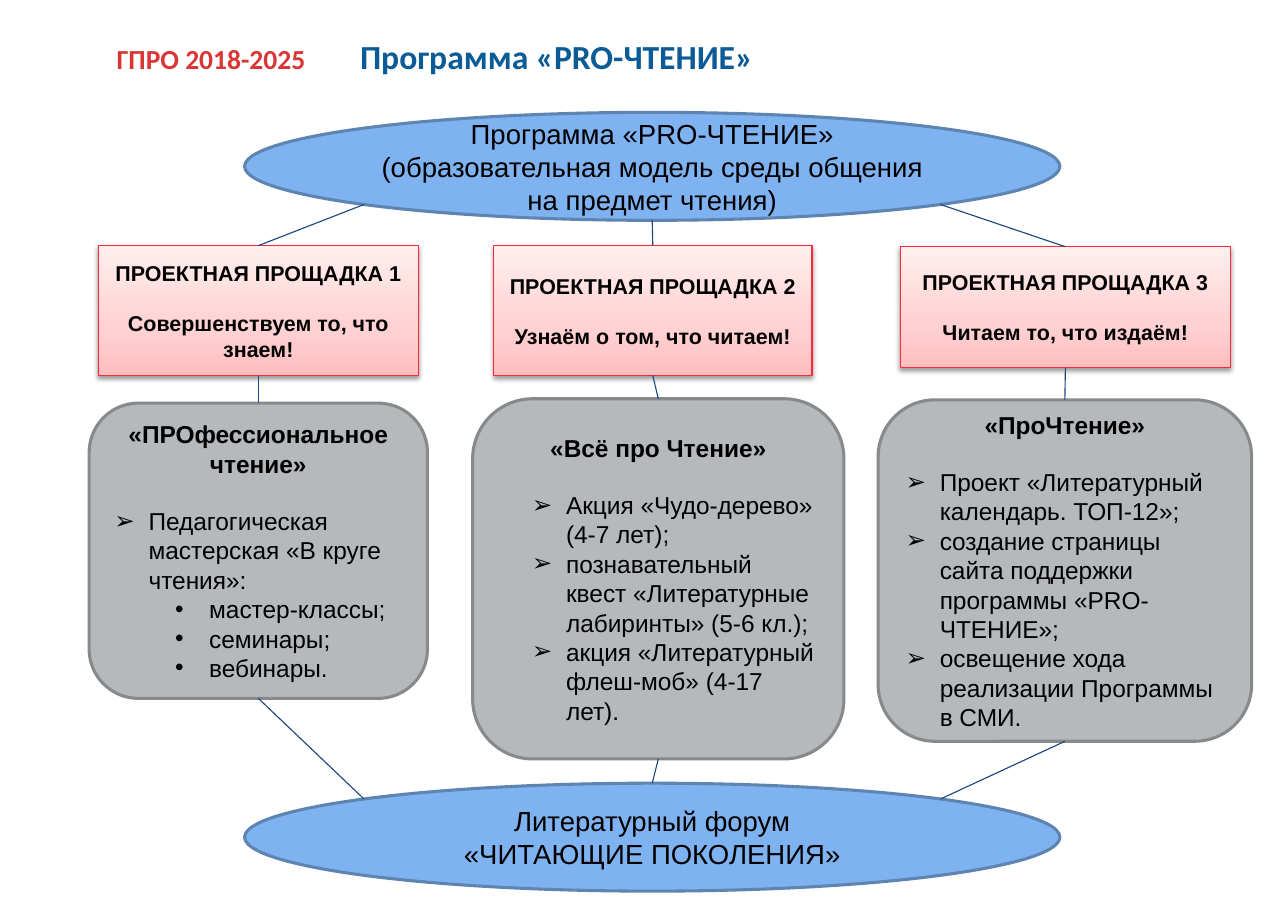
from lxml import etree
from pptx import Presentation
from pptx import util as u
from pptx.dml.color import RGBColor
from pptx.enum import shapes, text
from pptx.oxml import parse_xml
from pptx.oxml.ns import nsdecls, qn

BLACK, LINK = "000000", "1D477F"
OVAL = ("7FB2F0", "5E84B2")
CARD = ("B6B9BC", "87898B")
SITE_LINE = "FD2838"
SITE_STOPS = ((0, "FFBEBF"), (35, "FFD1D2"), (100, "FFEEEE"))
ARROW, DOT = "➢", "•"
HANG = 0.31

OVAL_LEFT, OVAL_WIDTH, OVAL_HEIGHT = 2.22, 7.4, 0.98
PROGRAM = ["Программа «PRO-ЧТЕНИЕ»",
           "(образовательная модель среды общения на предмет чтения)"]
FORUM = ["Литературный форум", "«ЧИТАЮЩИЕ ПОКОЛЕНИЯ»"]

# Each column: site box, motto, card box, card heading, items (bullet, indent, wording)
COLUMNS = [
    ((0.89, 2.23, 2.91, 1.18), "Совершенствуем то, что знаем!",
     (0.81, 3.66, 3.07, 2.68), "«ПРОфессиональное чтение»",
     [(ARROW, 0.31, "Педагогическая мастерская «В круге чтения»:"),
      (DOT, 0.86, "мастер-классы;"),
      (DOT, 0.86, "семинары;"),
      (DOT, 0.86, "вебинары.")]),
    ((4.48, 2.23, 2.89, 1.18), "Узнаём о том, что читаем!",
     (4.29, 3.62, 3.37, 3.27), "«Всё про Чтение»",
     [(ARROW, 0.59, "Акция «Чудо-дерево» (4-7 лет);"),
      (ARROW, 0.59, "познавательный квест «Литературные лабиринты» (5-6 кл.);"),
      (ARROW, 0.59, "акция «Литературный флеш-моб» (4-17 лет).")]),
    ((8.17, 2.24, 3, 1.1), "Читаем то, что издаём!",
     (7.97, 3.63, 3.39, 3.1), "«ПроЧтение»",
     [(ARROW, 0.31, "Проект «Литературный календарь. ТОП-12»;"),
      (ARROW, 0.31, "создание страницы сайта поддержки программы «PRO-ЧТЕНИЕ»;"),
      (ARROW, 0.31, "освещение хода реализации Программы в СМИ.")]),
]


def inches(values):
    return [u.Inches(value) for value in values]


def paint(color_format, color):
    color_format.rgb = RGBColor.from_string(color)


def style(para, size, color=BLACK, bold=False, font="Arial"):
    for span in para.runs:
        span.font.name, span.font.size, span.font.bold = font, u.Pt(size), bold
        paint(span.font.color, color)


def write(shape, lines, size, bold=False):
    """Fill a shape with centred paragraphs and return them."""
    frame = shape.text_frame
    frame.word_wrap = True
    frame.vertical_anchor = text.MSO_ANCHOR.MIDDLE
    frame.text = "\n".join(lines)
    for para in frame.paragraphs:
        para.alignment = text.PP_ALIGN.CENTER
        style(para, size, bold=bold)
    return frame.paragraphs


def add_panel(page, kind, box, line, width, fill=None):
    panel = page.shapes.add_shape(kind, *inches(box))
    panel.shadow.inherit = False
    if fill:
        panel.fill.solid()
        paint(panel.fill.fore_color, fill)
    paint(panel.line.color, line)
    panel.line.width = u.Pt(width)
    return panel


def add_heading(page, box, wording, size, color, wrap):
    frame = page.shapes.add_textbox(*inches(box)).text_frame
    frame.word_wrap = wrap
    frame.vertical_anchor = text.MSO_ANCHOR.MIDDLE if wrap else text.MSO_ANCHOR.TOP
    frame.text = wording
    style(frame.paragraphs[0], size, color, True, "Calibri")


def add_oval(page, top, lines):
    box = (OVAL_LEFT, top, OVAL_WIDTH, OVAL_HEIGHT)
    fill, line = OVAL
    write(add_panel(page, shapes.MSO_SHAPE.OVAL, box, line, 2, fill), lines, 18)


def add_gradient_and_shadow(panel):
    stops = "".join(f'<a:gs pos="{share * 1000}"><a:srgbClr val="{color}"/></a:gs>'
                    for share, color in SITE_STOPS)
    geometry = panel._element.spPr.find(qn("a:prstGeom"))
    geometry.addnext(parse_xml(
        f'<a:gradFill {nsdecls("a")} rotWithShape="1"><a:gsLst>{stops}</a:gsLst>'
        '<a:lin ang="16200000" scaled="0"/></a:gradFill>'))
    panel._element.spPr.find(qn("a:effectLst")).append(parse_xml(
        f'<a:outerShdw {nsdecls("a")} blurRad="{u.Pt(3.1)}" dist="{u.Pt(1.6)}" '
        'dir="5400000" rotWithShape="0"><a:srgbClr val="000000">'
        '<a:alpha val="38000"/></a:srgbClr></a:outerShdw>'))


def add_site(page, box, number, motto):
    panel = add_panel(page, shapes.MSO_SHAPE.RECTANGLE, box, SITE_LINE, 0.75)
    add_gradient_and_shadow(panel)
    name, _ = write(panel, [f"ПРОЕКТНАЯ ПРОЩАДКА {number}", motto], 14, True)
    name.space_after = u.Pt(16)


def add_bullet(para, mark, indent):
    props = para._p.get_or_add_pPr()
    props.set("marL", str(u.Inches(indent)))
    props.set("indent", str(-u.Inches(HANG)))
    etree.SubElement(props, qn("a:buFont")).set("typeface", "Arial")
    etree.SubElement(props, qn("a:buChar")).set("char", mark)


def add_card(page, box, heading, items):
    fill, line = CARD
    panel = add_panel(page, shapes.MSO_SHAPE.ROUNDED_RECTANGLE, box, line, 2, fill)
    wordings = [wording for _, _, wording in items]
    title, *rest = write(panel, [heading, *wordings], 16)
    style(title, 16, bold=True)
    title.space_after = u.Pt(18.4)
    for para, (mark, indent, _) in zip(rest, items):
        para.alignment = text.PP_ALIGN.LEFT
        add_bullet(para, mark, indent)


def add_link(page, start, end):
    link = page.shapes.add_connector(shapes.MSO_CONNECTOR.STRAIGHT,
                                     *inches((*start, *end)))
    paint(link.line.color, LINK)
    link.line.width = u.Pt(0.75)
    etree.SubElement(link._element.spPr, qn("a:effectLst"))


def top_of(box):
    left, top, width, _ = box
    return left + width / 2, top


def bottom_of(box):
    left, top, width, height = box
    return left + width / 2, top + height


def oval_point(top, column, side):
    """Point on an oval at -45, 0 or 45 degrees; side is 1 below, -1 above."""
    across = (column - 1) * 0.5 ** 0.5
    down = side * (1 - across ** 2) ** 0.5
    return (OVAL_LEFT + OVAL_WIDTH * (1 + across) / 2,
            top + OVAL_HEIGHT * (1 + down) / 2)


def add_scheme(page, program_top, forum_top):
    add_oval(page, program_top, PROGRAM)
    add_oval(page, forum_top, FORUM)
    for column, (site, motto, card, heading, items) in enumerate(COLUMNS):
        add_site(page, site, column + 1, motto)
        add_card(page, card, heading, items)
        add_link(page, oval_point(program_top, column, 1), top_of(site))
        add_link(page, bottom_of(site), top_of(card))
        add_link(page, bottom_of(card), oval_point(forum_top, column, -1))


def main():
    deck = Presentation()
    deck.slide_width, deck.slide_height = inches((11.69, 8.27))
    page = deck.slides.add_slide(deck.slide_layouts[6])
    add_heading(page, (0.96, 0.33, 1.92, 0.4), "ГПРО 2018-2025", 18, "D93635", False)
    add_heading(page, (3.17, 0, 8.35, 1.02), "Программа «PRO-ЧТЕНИЕ»", 22, "0B5B97", True)
    add_scheme(page, 1.02, 7.11)
    deck.save("out.pptx")


if __name__ == "__main__":
    main()
